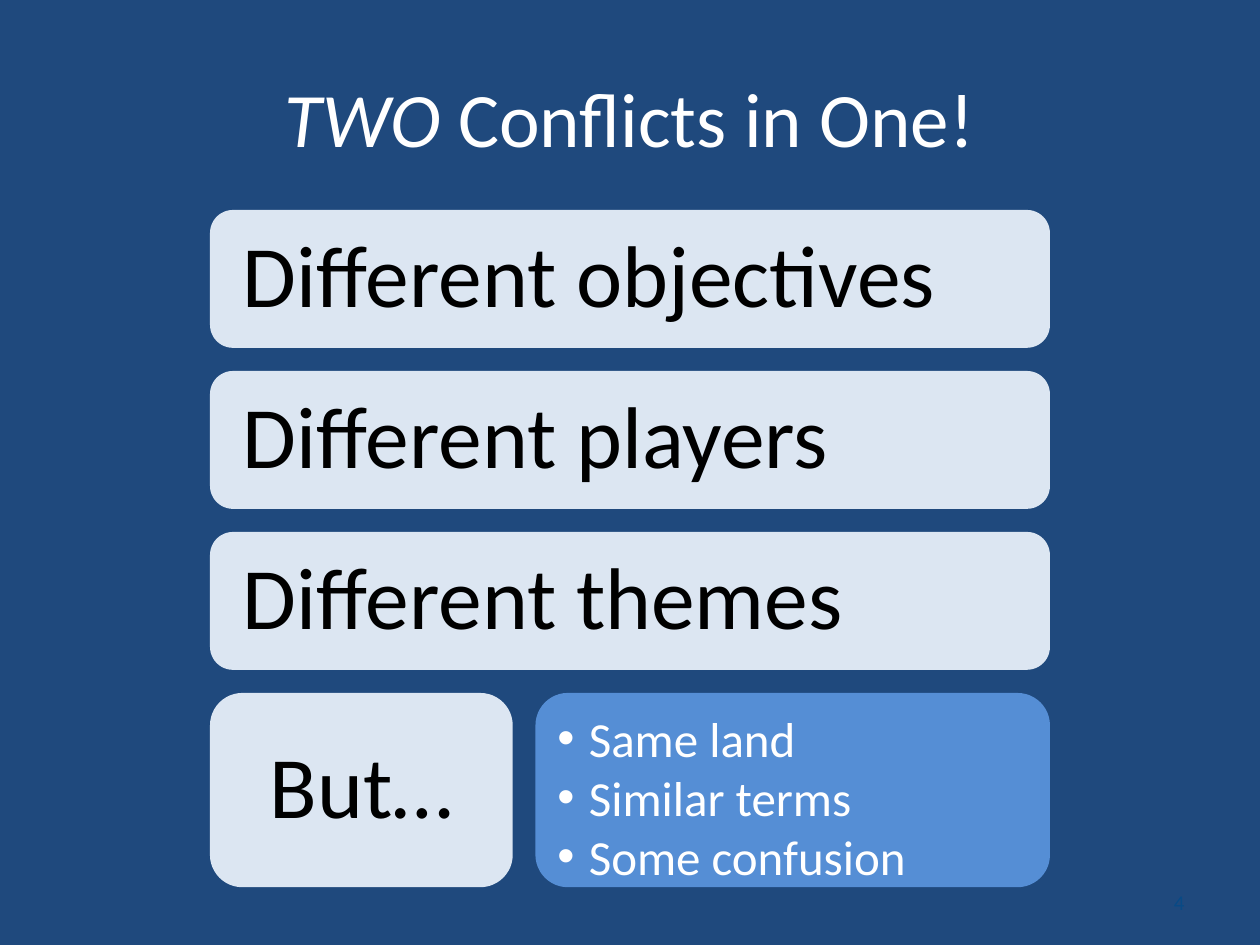
import pptx
import pptx.util
import pptx.dml.color
import pptx.enum.shapes
import pptx.enum.text
from lxml import etree

Pt = pptx.util.Pt
ALIGN = pptx.enum.text.PP_ALIGN
ANCHOR = pptx.enum.text.MSO_ANCHOR

FONT = "Calibri"
NAVY, PALE, BLUE = "1F497D", "DCE6F2", "558ED5"
WHITE, BLACK, NUMBER_BLUE = "FFFFFF", "000000", "084A86"

LEFT, TOP, WIDTH = 120, 120, 480
PITCH, CARD_HEIGHT, LAST_HEIGHT = 92, 78.8, 111
BUT_WIDTH, LIST_LEFT = 173, 306


def color(hex_string):
    return pptx.dml.color.RGBColor.from_string(hex_string)


def style(paragraph, size, hex_string, alignment):
    paragraph.alignment = alignment
    paragraph.font.name = FONT
    paragraph.font.size = Pt(size)
    paragraph.font.color.rgb = color(hex_string)


def add_text(slide, left, top, width, height, runs, size, hex_string, alignment):
    """Add a one-line text box; runs are (text, italic) pairs."""
    box = slide.shapes.add_textbox(Pt(left), Pt(top), Pt(width), Pt(height))
    frame = box.text_frame
    frame.word_wrap = True
    frame.vertical_anchor = ANCHOR.MIDDLE
    paragraph = frame.paragraphs[0]
    style(paragraph, size, hex_string, alignment)
    for text, italic in runs:
        run = paragraph.add_run()
        run.text = text
        run.font.italic = italic


def add_card(slide, left, top, width, height, fill):
    shape = slide.shapes.add_shape(
        pptx.enum.shapes.MSO_SHAPE.ROUNDED_RECTANGLE,
        Pt(left), Pt(top), Pt(width), Pt(height))
    shape.shadow.inherit = False
    shape.fill.solid()
    shape.fill.fore_color.rgb = color(fill)
    shape.line.fill.background()
    shape.text_frame.word_wrap = True
    return shape


def add_heading_card(slide, left, top, width, height, text, alignment):
    frame = add_card(slide, left, top, width, height, PALE).text_frame
    frame.vertical_anchor = ANCHOR.MIDDLE
    frame.margin_left = frame.margin_right = Pt(15)
    paragraph = frame.paragraphs[0]
    paragraph.text = text
    paragraph.line_spacing = 0.9
    style(paragraph, 50, BLACK, alignment)


def add_bullet(paragraph, indent):
    properties = paragraph._p.get_or_add_pPr()
    properties.set("marL", str(Pt(indent)))
    properties.set("indent", str(-Pt(indent)))
    namespace = properties.nsmap["a"]
    etree.SubElement(properties, f"{{{namespace}}}buFont", typeface="Arial")
    etree.SubElement(properties, f"{{{namespace}}}buChar", char="•")


def add_list_card(slide, left, top, width, height, items):
    frame = add_card(slide, left, top, width, height, BLUE).text_frame
    frame.vertical_anchor = ANCHOR.TOP
    frame.text = "\n".join(items)
    for paragraph in frame.paragraphs:
        add_bullet(paragraph, 18)
        style(paragraph, 28, WHITE, ALIGN.LEFT)


def main():
    presentation = pptx.Presentation()
    presentation.slide_width, presentation.slide_height = Pt(720), Pt(540)
    slide = presentation.slides.add_slide(presentation.slide_layouts[6])
    slide.background.fill.solid()
    slide.background.fill.fore_color.rgb = color(NAVY)

    # Title
    add_text(slide, 36, 21.6, 648, 90,
             [("TWO", True), (" Conflicts in One!", False)], 44, WHITE, ALIGN.CENTER)

    # Differences
    differences = ["Different objectives", "Different players", "Different themes"]
    for row, text in enumerate(differences):
        add_heading_card(slide, LEFT, TOP + row * PITCH, WIDTH, CARD_HEIGHT,
                         text, ALIGN.LEFT)

    # What they share
    last_top = TOP + len(differences) * PITCH
    add_heading_card(slide, LEFT, last_top, BUT_WIDTH, LAST_HEIGHT, "But…", ALIGN.CENTER)
    add_list_card(slide, LIST_LEFT, last_top, LEFT + WIDTH - LIST_LEFT, LAST_HEIGHT,
                  ["Same land", "Similar terms", "Some confusion"])

    # Slide number
    add_text(slide, 516, 501, 168, 29, [("4", False)], 12, NUMBER_BLUE, ALIGN.RIGHT)

    presentation.save("out.pptx")


if __name__ == "__main__":
    main()
